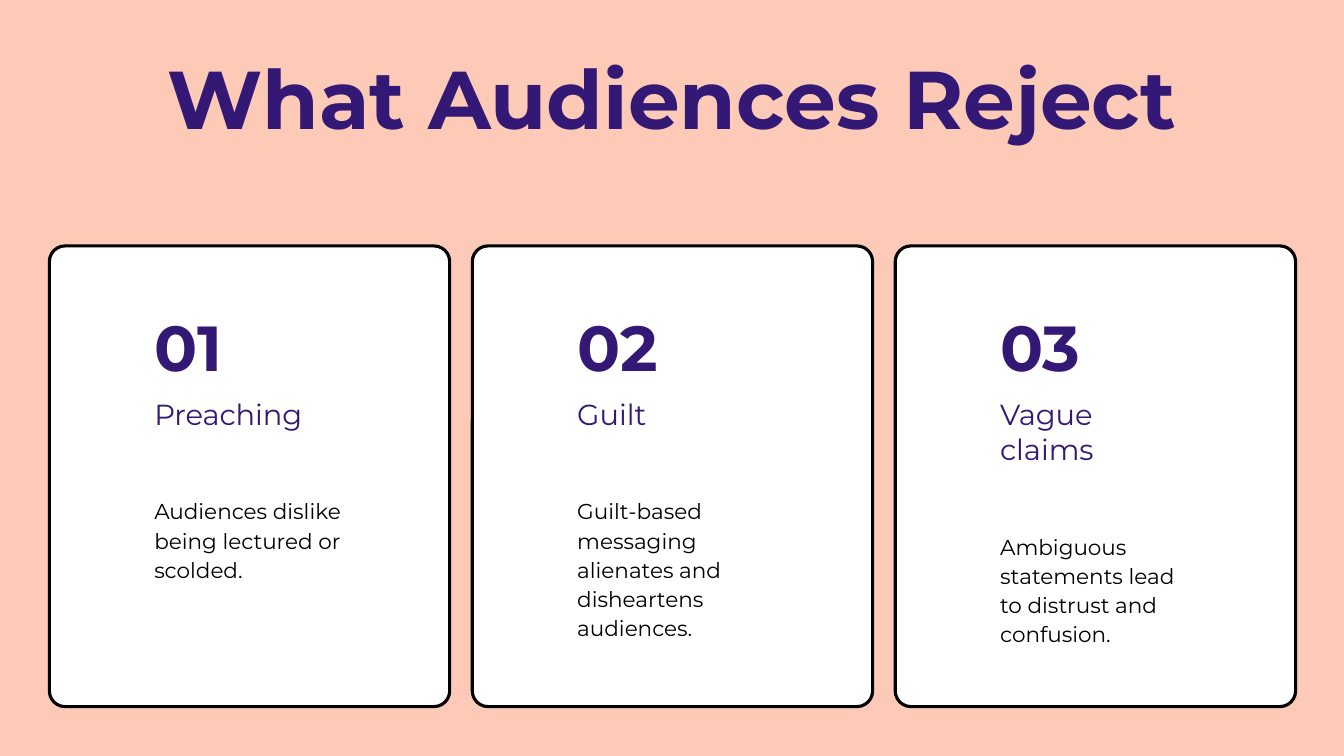
from pptx import Presentation
from pptx.dml.color import RGBColor
from pptx.enum.shapes import MSO_SHAPE
from pptx.enum.text import MSO_AUTO_SIZE, PP_ALIGN
from pptx.util import Inches, Pt

PURPLE = "331975"
BLACK = "000000"
WHITE = "FFFFFF"
PEACH = "FCCAB6"
FONT = "Montserrat"

MARGIN = 0.49
CARD_TOP, CARD_WIDTH, CARD_HEIGHT = 2.44, 3.97, 4.57
CARD_PITCH = 4.195
CORNER_RADIUS = 0.155
HEADING_LINE, BODY_LINE = 0.35, 0.28

# number, heading, heading lines, body, body lines
CARDS = [
    ("01", "Preaching", 1, "Audiences dislike being lectured or scolded.", 3),
    ("02", "Guilt", 1,
     "Guilt-based messaging alienates and disheartens audiences.", 5),
    ("03", "Vague claims", 2,
     "Ambiguous statements lead to distrust and confusion.", 4),
]


def color(hex_string):
    return RGBColor.from_string(hex_string)


def add_text(slide, text, left, top, width, height, *, size, line_spacing,
             fill=PURPLE, bold=False, align=PP_ALIGN.LEFT):
    box = slide.shapes.add_textbox(
        Inches(left), Inches(top), Inches(width), Inches(height))
    frame = box.text_frame
    frame.word_wrap = True
    frame.auto_size = MSO_AUTO_SIZE.SHAPE_TO_FIT_TEXT
    frame.margin_left = frame.margin_right = 0
    frame.margin_top = frame.margin_bottom = 0
    paragraph = frame.paragraphs[0]
    paragraph.alignment = align
    paragraph.line_spacing = Pt(line_spacing)
    run = paragraph.add_run()
    run.text = text
    run.font.name = FONT
    run.font.size = Pt(size)
    run.font.bold = bold
    run.font.color.rgb = color(fill)


def add_panel(slide, left, top, width, height):
    """Draw the white rounded panel behind one card."""
    panel = slide.shapes.add_shape(
        MSO_SHAPE.ROUNDED_RECTANGLE,
        Inches(left), Inches(top), Inches(width), Inches(height))
    panel.adjustments[0] = CORNER_RADIUS / min(width, height)
    panel.shadow.inherit = False
    panel.fill.solid()
    panel.fill.fore_color.rgb = color(WHITE)
    panel.line.color.rgb = color(BLACK)
    panel.line.width = Pt(2.25)


def add_card(slide, card, left, top, width, height):
    number, heading, heading_lines, body, body_lines = card
    add_panel(slide, left, top, width, height)

    text_left, text_width = left + 1.04, 1.88
    heading_top = top + 1.49
    heading_height = heading_lines * HEADING_LINE
    body_top = heading_top + heading_height + 0.63
    add_text(slide, number, text_left, top + 0.7, text_width, 0.7,
             size=45.4, line_spacing=48.3, bold=True)
    add_text(slide, heading, text_left, heading_top, text_width,
             heading_height, size=20.7, line_spacing=25.1)
    add_text(slide, body, text_left, body_top, text_width,
             body_lines * BODY_LINE, size=15.4, line_spacing=20.9, fill=BLACK)


def build_slide(presentation):
    slide = presentation.slides.add_slide(presentation.slide_layouts[6])
    background = slide.background.fill
    background.solid()
    background.fore_color.rgb = color(PEACH)

    add_text(slide, "What Audiences Reject", MARGIN, 0.58, 12.36, 0.88,
             size=58.5, line_spacing=62.2, bold=True, align=PP_ALIGN.CENTER)
    for index, card in enumerate(CARDS):
        add_card(slide, card, MARGIN + index * CARD_PITCH, CARD_TOP,
                 CARD_WIDTH, CARD_HEIGHT)


def main():
    presentation = Presentation()
    presentation.slide_width = Inches(13.33)
    presentation.slide_height = Inches(7.5)
    build_slide(presentation)
    presentation.save("out.pptx")


if __name__ == "__main__":
    main()
